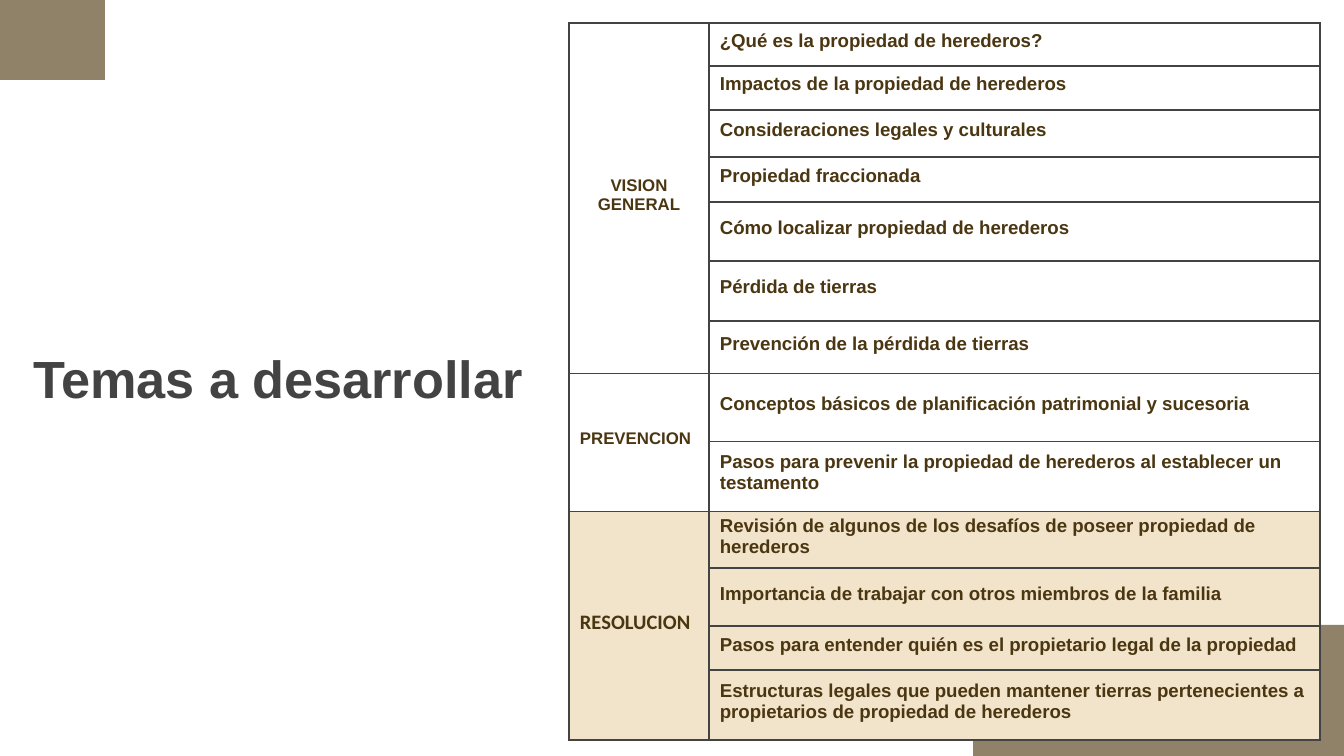
from lxml import etree
from pptx import Presentation
from pptx import util as u
from pptx.dml.color import RGBColor
from pptx.enum import shapes, text
from pptx.oxml import ns

SCALE = 914400 / 134.4
HEX = {"tan": "908269", "gray": "434343", "brown": "4B3612",
       "white": "FFFFFF", "cream": "F2E4CA"}
COLS = [140, 611]
GROUPS = [
    ("VISION GENERAL", 9, "Arial", None, [
        ("¿Qué es la propiedad de herederos?", 43),
        ("Impactos de la propiedad de herederos", 44),
        ("Consideraciones legales y culturales", 47),
        ("Propiedad fraccionada", 45),
        ("Cómo localizar propiedad de herederos", 59),
        ("Pérdida de tierras", 60),
        ("Prevención de la pérdida de tierras", 52)]),
    ("PREVENCION", 9, "Arial", "white", [
        ("Conceptos básicos de planificación patrimonial y sucesoria", 68),
        ("Pasos para prevenir la propiedad de herederos al establecer un testamento", 70)]),
    ("RESOLUCION", 11, "Calibri", "cream", [
        ("Revisión de algunos de los desafíos de poseer propiedad de herederos", 56),
        ("Importancia de trabajar con otros miembros de la familia", 58),
        ("Pasos para entender quién es el propietario legal de la propiedad", 44),
        ("Estructuras legales que pueden mantener tierras pertenecientes a "
         "propietarios de propiedad de herederos", 70)]),
]


def px(n):
    return u.Emu(round(n * SCALE))


def color(name):
    return RGBColor.from_string(HEX[name])


def style(para, size, face, tone, align=text.PP_ALIGN.LEFT):
    para.alignment = align
    font = para.font
    font.size, font.name, font.bold = u.Pt(size), face, True
    font.color.rgb = color(tone)


def add_block(slide, *box):
    block = slide.shapes.add_shape(shapes.MSO_SHAPE.RECTANGLE, *map(px, box))
    block.shadow.inherit = False
    block.fill.solid()
    block.fill.fore_color.rgb = color("tan")
    block.line.fill.background()


def set_title(slide, words, *box):
    title = slide.shapes.title
    title.left, title.top, title.width, title.height = map(px, box)
    frame = title.text_frame
    frame.text = words
    frame.word_wrap = True
    frame.auto_size = text.MSO_AUTO_SIZE.NONE
    frame.vertical_anchor = text.MSO_ANCHOR.MIDDLE
    frame.margin_left = frame.margin_right = px(13)
    frame.margin_top = frame.margin_bottom = px(13)
    style(frame.paragraphs[0], 28, "Arial", "gray")


def add_edges(cell):
    props = cell._tc.get_or_add_tcPr()
    for side in ("lnL", "lnR", "lnT", "lnB"):
        line = etree.SubElement(props, ns.qn("a:" + side), w=str(u.Pt(1)))
        fill = etree.SubElement(line, ns.qn("a:solidFill"))
        etree.SubElement(fill, ns.qn("a:srgbClr"), val=HEX["gray"])


def paint(cell, fill):
    add_edges(cell)
    if fill:
        cell.fill.solid()
        cell.fill.fore_color.rgb = color(fill)
    else:
        cell.fill.background()
    cell.vertical_anchor = text.MSO_ANCHOR.MIDDLE
    cell.margin_left = cell.margin_right = cell.margin_bottom = px(11)
    cell.margin_top = px(4)


def write(cell, words, size, face, align=text.PP_ALIGN.LEFT):
    cell.text = words
    style(cell.text_frame.paragraphs[0], size, face, "brown", align)


def add_topics(slide, left, top):
    sizes = [size for group in GROUPS for _, size in group[-1]]
    table = slide.shapes.add_table(len(sizes), len(COLS), px(left), px(top),
                                   px(sum(COLS)), px(sum(sizes))).table
    table.first_row = table.horz_banding = False
    for col, wide in zip(table.columns, COLS):
        col.width = px(wide)
    for row, high in zip(table.rows, sizes):
        row.height = px(high)
    start = 0
    for name, size, face, fill, topics in GROUPS:
        for row, (topic, _) in enumerate(topics, start):
            for col in range(len(COLS)):
                paint(table.cell(row, col), fill)
            write(table.cell(row, 1), topic, 10, "Arial")
        head = table.cell(start, 0)
        align = text.PP_ALIGN.LEFT if start else text.PP_ALIGN.CENTER
        write(head, name, size, face, align)
        start += len(topics)
        head.merge(table.cell(start - 1, 0))


def main():
    deck = Presentation()
    deck.slide_width, deck.slide_height = px(1344), px(756)
    slide = deck.slides.add_slide(deck.slide_layouts[5])
    add_block(slide, 0, 0, 105, 80)
    add_block(slide, 973, 625, 371, 131)
    set_title(slide, "Temas a desarrollar", 20, 336, 652, 83)
    add_topics(slide, 569, 23)
    deck.save("out.pptx")


if __name__ == "__main__":
    main()
